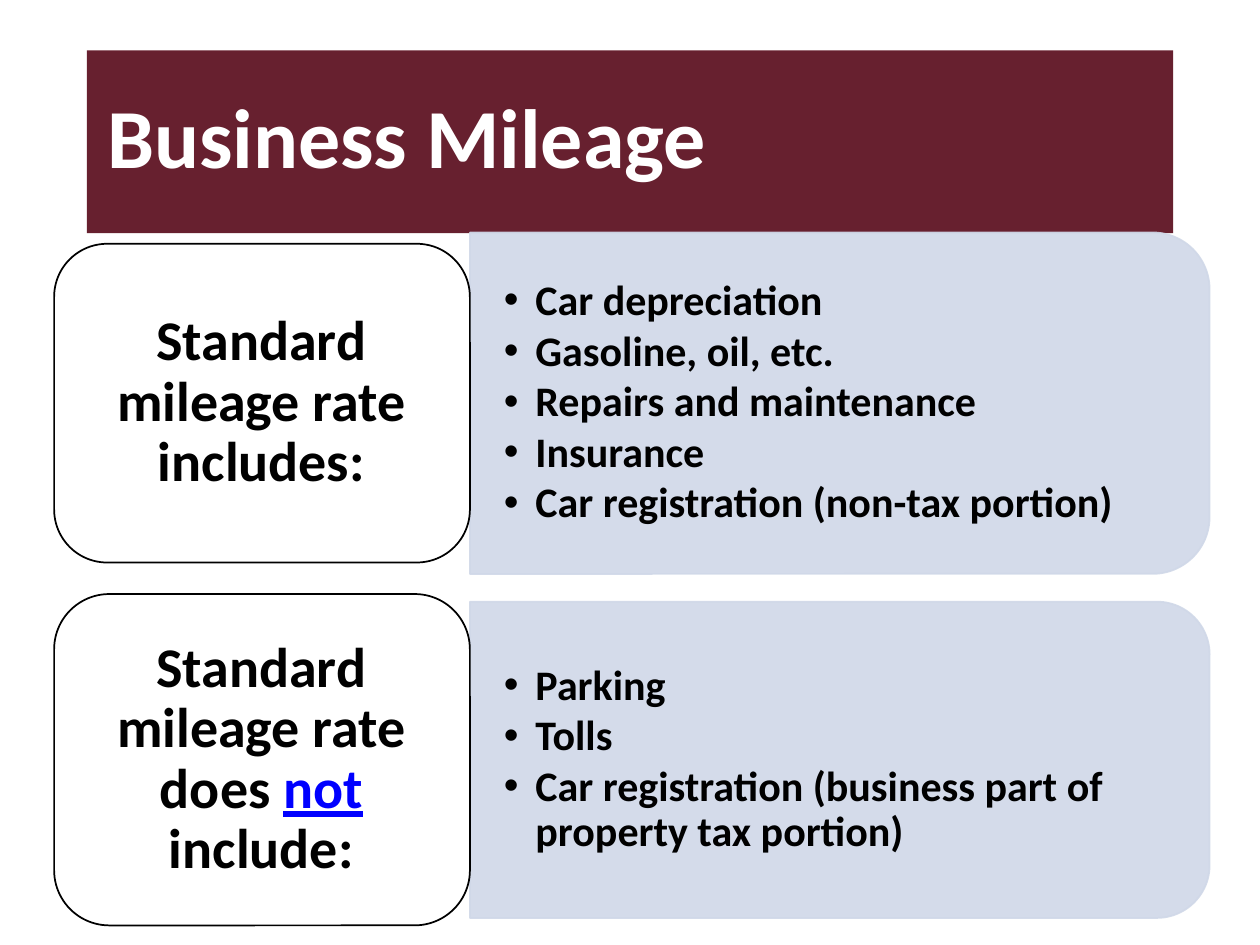
"""Build the Business Mileage slide."""
from lxml import etree
from pptx import Presentation
from pptx.dml.color import RGBColor
from pptx.enum.shapes import MSO_SHAPE as SHAPE
from pptx.enum.text import MSO_ANCHOR as ANCHOR, PP_ALIGN as ALIGN
from pptx.oxml.ns import qn
from pptx.util import Inches, Pt

MAROON = RGBColor(0x67, 0x20, 0x2F)
PALE = RGBColor(0xD0, 0xD8, 0xE8)
BLUE = RGBColor(0x00, 0x00, 0xFF)
BLACK = RGBColor(0x00, 0x00, 0x00)
WHITE = RGBColor(0xFF, 0xFF, 0xFF)


def write(s, paragraphs, size, color=BLACK, align=ALIGN.LEFT, inset=(0.1, 0.05),
          left=None, bullet=False, after=0, link=None):
    tf = s.text_frame
    tf.word_wrap = True
    tf.vertical_anchor = ANCHOR.MIDDLE
    tf.margin_left = Inches(inset[0] if left is None else left)
    tf.margin_right = Inches(inset[0])
    tf.margin_top = tf.margin_bottom = Inches(inset[1])
    for i, text in enumerate(paragraphs):
        p = tf.add_paragraph() if i else tf.paragraphs[0]
        p.alignment = align
        p.line_spacing = 0.9
        p.space_after = Pt(after)
        if bullet:
            pPr = p._p.get_or_add_pPr()
            pPr.set("marL", str(Inches(0.25)))
            pPr.set("indent", str(Inches(-0.25)))
            etree.SubElement(pPr, qn("a:buFont"), typeface="Arial")
            etree.SubElement(pPr, qn("a:buChar"), char="•")
        for part in text.partition(link) if link else [text]:
            r = p.add_run()
            r.text = part
            r.font.name = "Calibri"
            r.font.size = Pt(size)
            r.font.bold = True
            r.font.underline = part == link
            r.font.color.rgb = BLUE if part == link else color


prs = Presentation()
prs.slide_width, prs.slide_height = Inches(10), Inches(7.5)
slide = prs.slides.add_slide(prs.slide_layouts[6])
shapes = slide.shapes

title = shapes.add_shape(SHAPE.RECTANGLE, Inches(0.69), Inches(0.4), Inches(8.62), Inches(1.45))
title.shadow.inherit = False
title.fill.solid()
title.fill.fore_color.rgb = MAROON
title.line.fill.background()
write(title, ["Business Mileage"], 48, color=WHITE, left=0.16)

rows = [
    (3.2, 2.71, 2.53, "Standard mileage rate includes:", None,
     ["Car depreciation", "Gasoline, oil, etc.", "Repairs and maintenance",
      "Insurance", "Car registration (non-tax portion)"]),
    (6.03, 2.51, 2.63, "Standard mileage rate does not include:", "not",
     ["Parking", "Tolls", "Car registration (business part of property tax portion)"]),
]
panel_width = 5.87
panel_center = 3.73 + panel_width / 2

for center, panel_height, label_height, label, link, items in rows:
    panel = shapes.add_shape(
        SHAPE.ROUND_2_SAME_RECTANGLE,
        Inches(panel_center - panel_height / 2), Inches(center - panel_width / 2),
        Inches(panel_height), Inches(panel_width))
    panel.rotation = 90
    panel.shadow.inherit = False
    panel.fill.solid()
    panel.fill.fore_color.rgb = PALE
    panel.line.color.rgb = PALE
    panel.line.width = Pt(1)
    for color in panel._element.spPr.iter(qn("a:srgbClr")):
        etree.SubElement(color, qn("a:alpha"), val="90000")

    height = panel_height - 0.25
    s = shapes.add_textbox(Inches(3.73), Inches(center - height / 2), Inches(5.74), Inches(height))
    write(s, items, 24, inset=(0.27, 0.14), bullet=True, after=3)

    box = shapes.add_shape(SHAPE.ROUNDED_RECTANGLE, Inches(0.43),
                           Inches(center - label_height / 2), Inches(3.3), Inches(label_height))
    box.shadow.inherit = False
    box.fill.background()
    box.line.color.rgb = BLACK
    box.line.width = Pt(1)

    height = label_height - 0.25
    s = shapes.add_textbox(Inches(0.55), Inches(center - height / 2), Inches(3.05), Inches(height))
    write(s, [label], 32, align=ALIGN.CENTER, inset=(0.13, 0.07), link=link)

prs.save("out.pptx")
